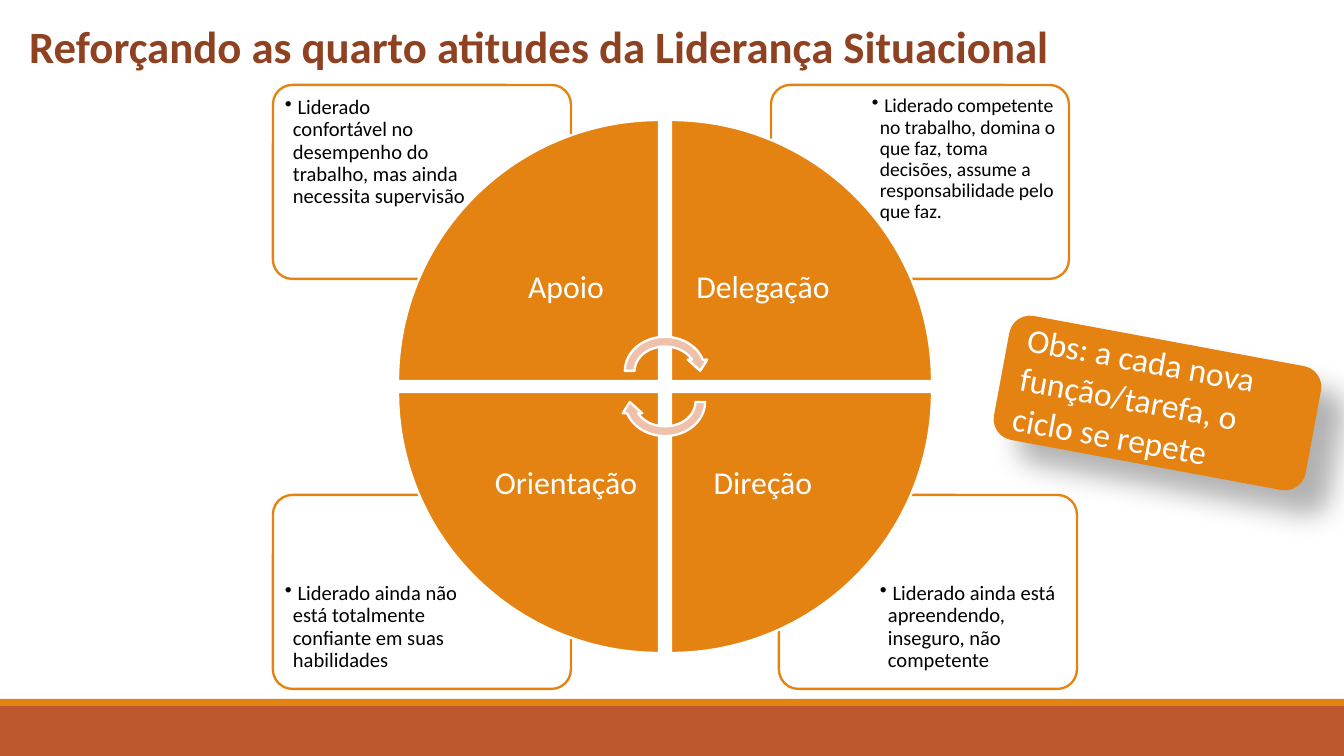
import pptx
import pptx.util
import pptx.dml.color
import pptx.enum.shapes
import pptx.enum.text
import pptx.oxml
import pptx.oxml.ns
import lxml.etree

SCALE = 914400 / 134.4
COLORS = {
    "orange": "E48312",
    "rust": "BD582C",
    "title": "8E4221",
    "arrow": "EFC1AB",
    "white": "FFFFFF",
    "black": "000000",
}
SHAPES = pptx.enum.shapes.MSO_SHAPE
ALIGN = pptx.enum.text.PP_ALIGN
MIDDLE = pptx.enum.text.MSO_ANCHOR.MIDDLE

presentation = pptx.Presentation()
presentation.slide_width = round(1344 * SCALE)
presentation.slide_height = round(756 * SCALE)
slide = presentation.slides.add_slide(presentation.slide_layouts[6])


def add_shape(kind, box, fill, line=None, rotation=0):
    shape = slide.shapes.add_shape(kind, *[round(value * SCALE) for value in box])
    shape.shadow.inherit = False
    shape.rotation = rotation
    shape.fill.solid()
    shape.fill.fore_color.rgb = pptx.dml.color.RGBColor.from_string(COLORS[fill])
    if line:
        shape.line.color.rgb = pptx.dml.color.RGBColor.from_string(COLORS[line])
        shape.line.width = pptx.util.Pt(1.25)
    else:
        shape.line.fill.background()
    return shape


def write_text(text, size, color, box=None, shape=None, margins=None, bullet=False):
    if shape is None:
        shape = slide.shapes.add_textbox(*[round(value * SCALE) for value in box])
    frame = shape.text_frame
    frame.word_wrap = True
    if margins:
        left, top, right, bottom = [round(value * SCALE) for value in margins]
        frame.margin_left, frame.margin_top = left, top
        frame.margin_right, frame.margin_bottom = right, bottom
    paragraph = frame.paragraphs[0]
    paragraph.text = text
    paragraph.alignment = ALIGN.LEFT
    if bullet:
        properties = paragraph._p.get_or_add_pPr()
        properties.set("marL", str(round(8 * SCALE)))
        properties.set("indent", str(round(-8 * SCALE)))
        mark = lxml.etree.SubElement(properties, pptx.oxml.ns.qn("a:buChar"))
        mark.set("char", "•")
    paragraph.font.name = "Calibri"
    paragraph.font.size = pptx.util.Pt(size)
    paragraph.font.color.rgb = pptx.dml.color.RGBColor.from_string(COLORS[color])
    return frame


add_shape(SHAPES.RECTANGLE, (0, 706, 1344, 50), "rust")
add_shape(SHAPES.RECTANGLE, (0, 699, 1344, 7), "orange")

title = write_text("Reforçando as quarto atitudes da Liderança Situacional",
                   24, "title", box=(16, 12, 1052, 67))
title.word_wrap = False
title.paragraphs[0].font.bold = True
title.paragraphs[0].space_after = pptx.util.Pt(4.5)

descriptions = [
    (779, 495, 872, 547, 36, 11,
     " Liderado ainda está apreendendo, inseguro, não competente"),
    (273, 495, 277, 547, 36, 11,
     " Liderado ainda não está totalmente confiante em suas habilidades"),
    (771, 85, 865, 89, 7, 10.5,
     " Liderado competente no trabalho, domina o que faz, toma decisões, "
     "assume a responsabilidade pelo que faz."),
    (273, 85, 277, 89, 8, 11,
     " Liderado confortável no desempenho do trabalho, mas ainda necessita supervisão"),
]
for left, top, text_left, text_top, inset, size, text in descriptions:
    card = add_shape(SHAPES.ROUNDED_RECTANGLE, (left, top, 298, 194), "white", "orange")
    card.adjustments[0] = 0.1
    color = card.fill._xPr.find(".//" + pptx.oxml.ns.qn("a:srgbClr"))
    lxml.etree.SubElement(color, pptx.oxml.ns.qn("a:alpha")).set("val", "90000")
    side = 7 if size < 11 else 8
    frame = write_text(text, size, "black", box=(text_left, text_top, 200, 136),
                       margins=(side, inset, side, side), bullet=True)
    frame.paragraphs[0].line_spacing = 0.9

quadrants = [
    ("Apoio", 398, 120, 474, 196),
    ("Delegação", 671, 120, 671, 196),
    ("Direção", 671, 392, 671, 392),
    ("Orientação", 398, 392, 474, 392),
]
for index, (name, left, top, text_left, text_top) in enumerate(quadrants):
    add_shape(SHAPES.PIE_WEDGE, (left, top, 261, 261), "orange", "white", index * 90)
    frame = write_text(name, 17, "white", box=(text_left, text_top, 184, 184),
                       margins=(17, 17, 17, 17))
    frame.vertical_anchor = MIDDLE
    frame.paragraphs[0].alignment = ALIGN.CENTER
    frame.paragraphs[0].line_spacing = 0.9

for top, rotation in ((332, 0), (363, 180)):
    add_shape(SHAPES.CIRCULAR_ARROW, (620, top, 90, 78), "arrow", "white", rotation)

note = add_shape(SHAPES.ROUNDED_RECTANGLE, (999, 340, 317, 126), "orange", rotation=10.5)
write_text("Obs: a cada nova função/tarefa, o ciclo se repete", 18, "white",
           shape=note).vertical_anchor = MIDDLE
effects = note._element.spPr.find(pptx.oxml.ns.qn("a:effectLst"))
effects.append(pptx.oxml.parse_xml(
    f'<a:outerShdw {pptx.oxml.ns.nsdecls("a")} blurRad="190500" dist="228600" '
    'dir="2700000" algn="ctr" rotWithShape="0">'
    f'<a:srgbClr val="{COLORS["black"]}"><a:alpha val="30000"/></a:srgbClr></a:outerShdw>'))

presentation.save("out.pptx")
